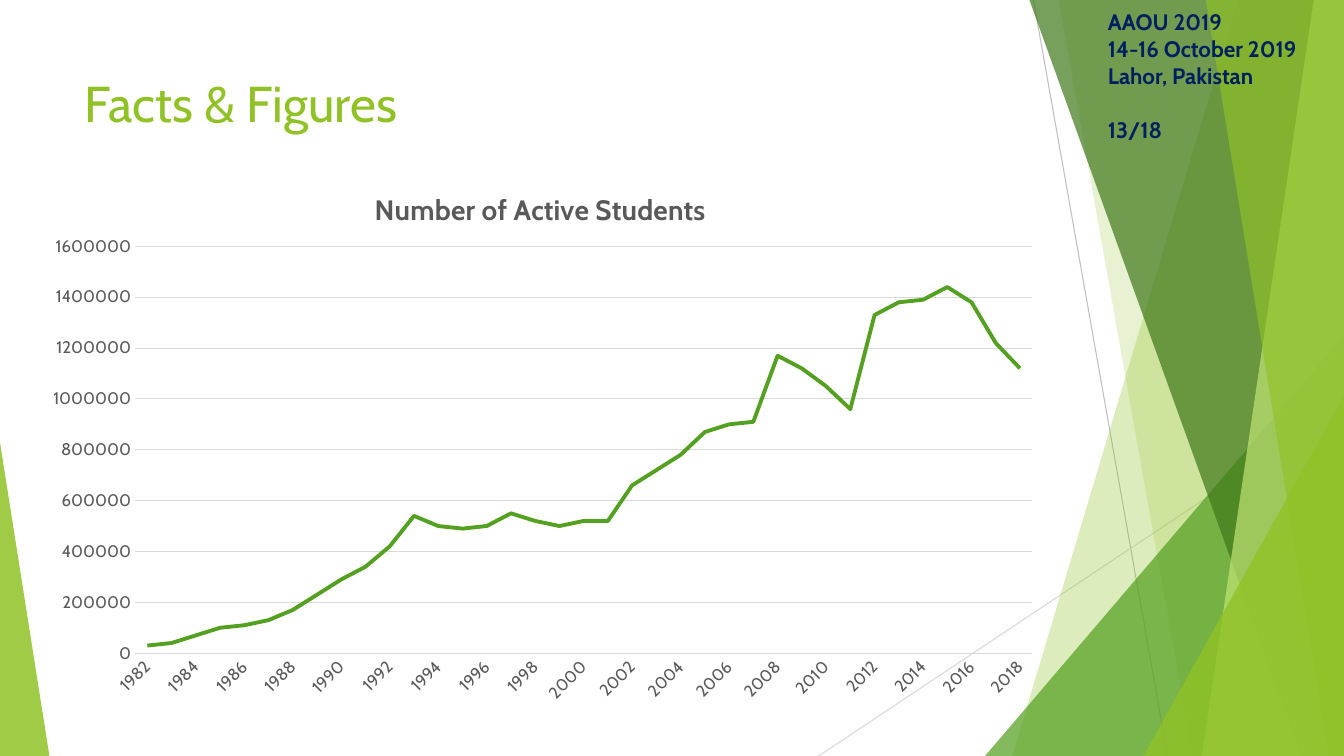
from lxml.etree import SubElement
from pptx import Presentation
from pptx.chart.data import CategoryChartData
from pptx.dml.color import RGBColor
from pptx.enum.chart import XL_CHART_TYPE, XL_TICK_MARK
from pptx.enum.shapes import MSO_CONNECTOR, MSO_SHAPE
from pptx.enum.text import MSO_ANCHOR, PP_ALIGN
from pptx.oxml import parse_xml
from pptx.oxml.ns import nsdecls, qn
from pptx.util import Inches, Pt

FONT = "Cabin"
WIDTH, HEIGHT = 13.33, 7.5
LIME, GREEN, FOREST, PALE = "90C226", "54A021", "3F7819", "C0E474"
NAVY, GRAY, LIGHT_GRAY, RULE_GRAY = "002060", "595959", "D9D9D9", "BFBFBF"

# Active students in ten thousands, one value per year from 1982
FIRST_YEAR = 1982
STUDENTS = [3, 4, 7, 10, 11, 13, 17, 23, 29, 34, 42, 54, 50, 49, 50, 55, 52, 50, 52,
            52, 66, 72, 78, 87, 90, 91, 117, 112, 105, 96, 133, 138, 139, 144, 138,
            122, 112]


def color(hex_value):
    return RGBColor.from_string(hex_value)


def style_font(font, size, hex_value, bold=False):
    font.name, font.size, font.bold = FONT, Pt(size), bold
    font.color.rgb = color(hex_value)


def style_line(line, hex_value, width):
    line.color.rgb = color(hex_value)
    line.width = Pt(width)


def paint(shape, hex_value, opacity):
    shape.shadow.inherit = False
    shape.line.fill.background()
    shape.fill.solid()
    shape.fill.fore_color.rgb = color(hex_value)
    tone = shape.fill._xPr.find(qn("a:solidFill"))[0]
    SubElement(tone, qn("a:alpha"), val=str(opacity * 1000))


def add_rule(slide, start, end, hex_value):
    rule = slide.shapes.add_connector(
        MSO_CONNECTOR.STRAIGHT, *[Inches(v) for v in (*start, *end)])
    style_line(rule.line, hex_value, 0.75)
    SubElement(rule._element.spPr, qn("a:effectLst"))


def add_band(slide, top_x, bottom_x, hex_value, opacity):
    """A band with a slanted left edge that runs to the right slide edge."""
    corners = [(Inches(x), Inches(y)) for x, y in
               ((top_x, 0), (WIDTH, 0), (WIDTH, HEIGHT), (bottom_x, HEIGHT))]
    outline = slide.shapes.build_freeform(*corners[0], scale=1.0)
    outline.add_line_segments(corners[1:], close=True)
    paint(outline.convert_to_shape(), hex_value, opacity)


def add_wedge(slide, left, top, width, apex, hex_value, opacity):
    """A triangle that stands on the bottom slide edge."""
    wedge = slide.shapes.add_shape(
        MSO_SHAPE.ISOSCELES_TRIANGLE, Inches(left), Inches(top),
        Inches(width), Inches(HEIGHT - top))
    wedge.adjustments[0] = apex
    paint(wedge, hex_value, opacity)


def add_facets(slide):
    add_rule(slide, (10.25, 0), (11.58, HEIGHT), RULE_GRAY)
    add_rule(slide, (WIDTH, 4.03), (8.12, HEIGHT), LIGHT_GRAY)
    add_band(slide, 12.28, 10.04, LIME, 30)
    add_band(slide, 10.5, 11.83, LIME, 20)
    add_wedge(slide, 9.77, 3.33, 3.56, 1, GREEN, 72)
    add_band(slide, 10.21, 12.91, FOREST, 70)
    add_band(slide, 13.03, 11.92, PALE, 70)
    add_band(slide, 11.96, 13.18, LIME, 65)
    add_wedge(slide, 11.34, 3.93, 1.99, 1, LIME, 80)
    add_wedge(slide, 0, 4.39, 0.49, 0, LIME, 85)


def add_heading(slide, left, top, width, height):
    heading = slide.shapes.title
    heading.left, heading.top = Inches(left), Inches(top)
    heading.width, heading.height = Inches(width), Inches(height)
    frame = heading.text_frame
    frame.text = "Facts & Figures"
    frame.vertical_anchor = MSO_ANCHOR.TOP
    frame.paragraphs[0].alignment = PP_ALIGN.LEFT
    style_font(frame.paragraphs[0].runs[0].font, 36, LIME)


def layout_xml(**settings):
    """A manual chart layout, in fractions of the chart's box."""
    parts = "".join(f'<c:{key} val="{value}"/>' for key, value in settings.items())
    return parse_xml(f'<c:layout {nsdecls("c")}><c:manualLayout>{parts}'
                     '</c:manualLayout></c:layout>')


def set_layout(parent, before, **settings):
    for old in parent.findall(qn("c:layout")):
        parent.remove(old)
    parent.find(qn(before)).addprevious(layout_xml(**settings))


def add_students_chart(slide, left, top, width, height):
    data = CategoryChartData()
    data.categories = [str(FIRST_YEAR + i) for i in range(len(STUDENTS))]
    data.add_series("Number of Active Students", [n * 10000 for n in STUDENTS])
    chart = slide.shapes.add_chart(
        XL_CHART_TYPE.LINE, Inches(left), Inches(top), Inches(width),
        Inches(height), data).chart
    style_font(chart.font, 12, GRAY)
    chart.has_legend = False

    # Title
    chart.has_title = True
    caption = chart.chart_title.text_frame
    caption.text = "Number of Active Students"
    style_font(caption.paragraphs[0].runs[0].font, 20, GRAY, bold=True)
    chart.chart_title.include_in_layout = False
    set_layout(chart.chart_title._element, "c:overlay",
               xMode="edge", yMode="edge", x=0.33, y=0.05)

    # Plot
    chart.plots[0].vary_by_categories = False
    students = chart.plots[0].series[0]
    students.smooth = False
    style_line(students.format.line, GREEN, 2.75)
    set_layout(chart._chartSpace.chart.plotArea, "c:lineChart",
               layoutTarget="inner", xMode="edge", yMode="edge",
               x=0.1, y=0.16, w=0.88, h=0.73)

    # Axes
    years, counts = chart.category_axis, chart.value_axis
    for axis in (years, counts):
        axis.major_tick_mark = axis.minor_tick_mark = XL_TICK_MARK.NONE
        style_font(axis.tick_labels.font, 12, GRAY)
    style_line(years.format.line, LIGHT_GRAY, 1)
    years._element.txPr.find(qn("a:bodyPr")).set("rot", "-2700000")
    skip = parse_xml(f'<c:tickLblSkip {nsdecls("c")} val="2"/>')
    years._element.find(qn("c:noMultiLvlLbl")).addprevious(skip)
    counts.minimum_scale, counts.maximum_scale = 0, 1600000
    counts.major_unit = 200000
    counts.tick_labels.number_format = "0"
    counts.tick_labels.number_format_is_linked = False
    counts.format.line.fill.background()
    style_line(counts.major_gridlines.format.line, LIGHT_GRAY, 0.75)


def add_event_note(slide, left, top, width, height):
    note = slide.shapes.add_textbox(
        Inches(left), Inches(top), Inches(width), Inches(height)).text_frame
    note.word_wrap = True
    note.vertical_anchor = MSO_ANCHOR.MIDDLE
    note.text = "AAOU 2019\n14-16 October 2019 Lahor, Pakistan\n13/18"
    for paragraph in note.paragraphs:
        style_font(paragraph.runs[0].font, 16, NAVY, bold=True)
    note.paragraphs[-1].space_before = Pt(19.5)


def main():
    deck = Presentation()
    deck.slide_width, deck.slide_height = Inches(WIDTH), Inches(HEIGHT)
    slide = deck.slides.add_slide(deck.slide_layouts[5])
    add_facets(slide)
    add_heading(slide, 0.74, 0.67, 9.4, 1.44)
    add_students_chart(slide, 0.33, 1.56, 10.11, 5.53)
    add_event_note(slide, 10.89, 0.12, 2.44, 1.26)
    deck.save("out.pptx")


if __name__ == "__main__":
    main()
